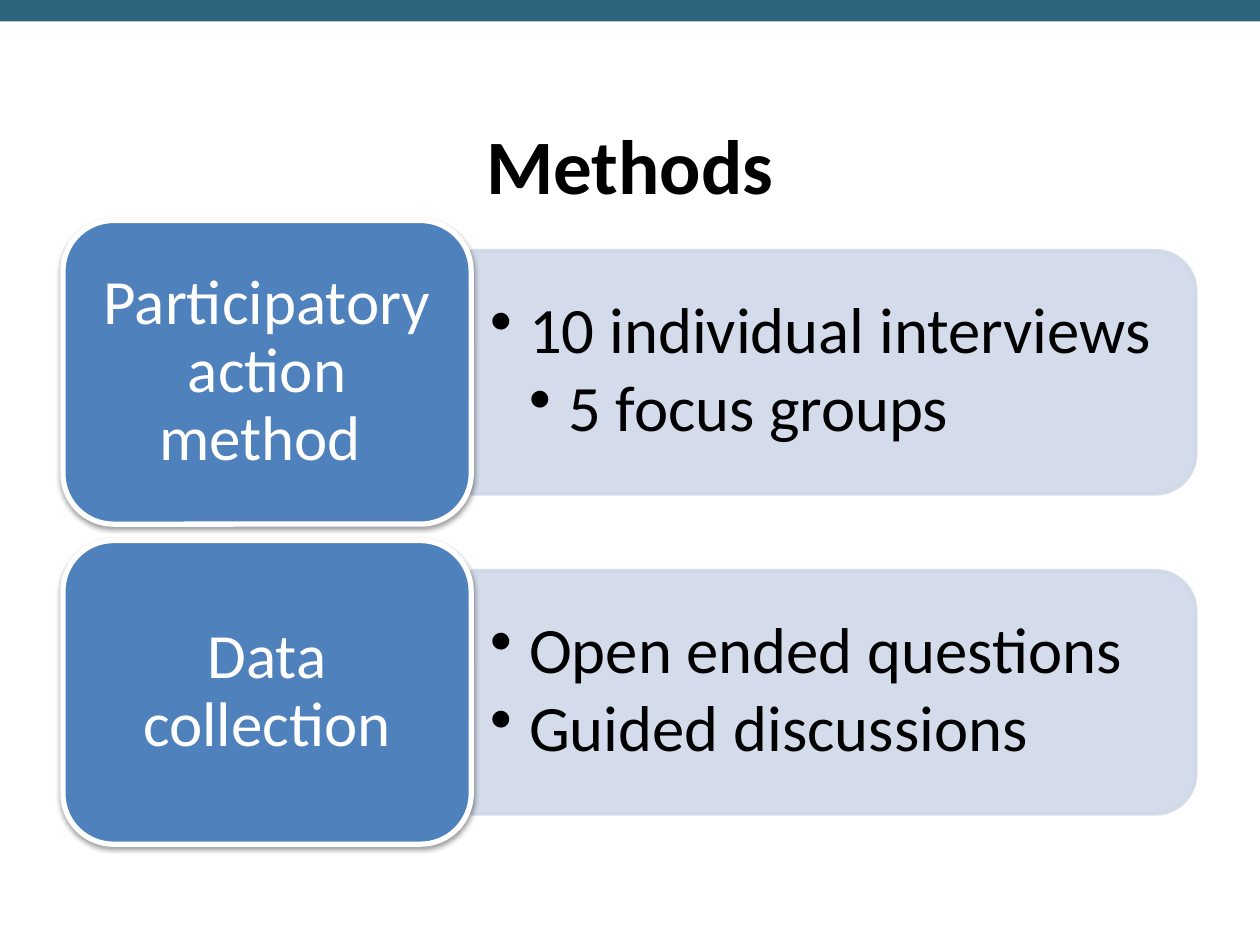
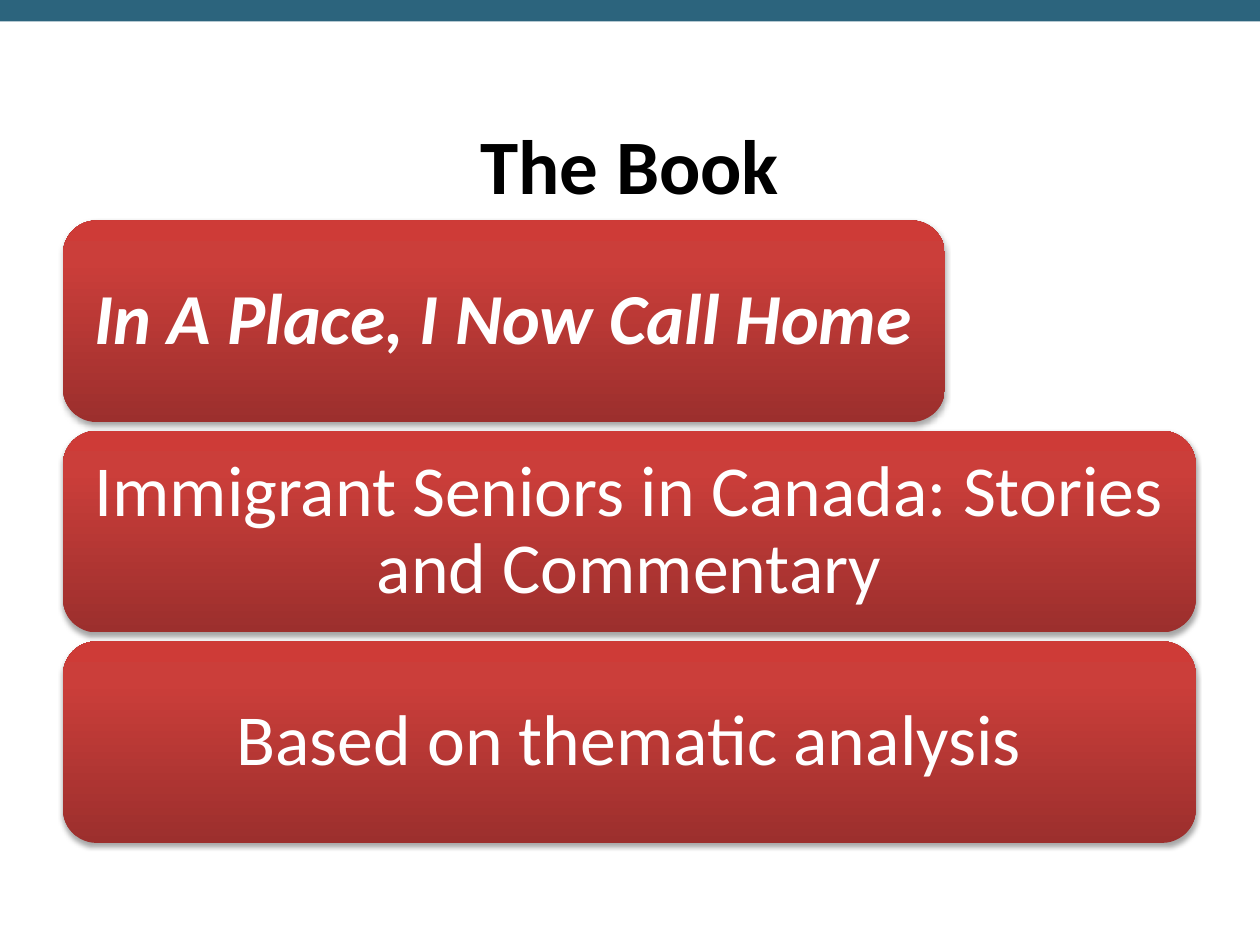
from copy import deepcopy

from lxml import etree
from pptx import Presentation
from pptx import util as u
from pptx.dml.color import RGBColor
from pptx.enum import shapes, text
from pptx.oxml.ns import qn

PX = 9144  # 100 px to the inch
FONT = "Calibri"
BLACK, WHITE = "000000", "FFFFFF"
BAND, CARD, PANEL = "2C647D", "4F81BD", "D0D8E8"
RED_STOPS = ((0, "9C2F2D"), (0.8, "CB3E3A"), (1, "CE3B37"))
SLIDE_WIDTH, SLIDE_HEIGHT = 1000, 750
TITLE_BOX = (50, 67, 900, 125)
BODY_BOX = (50, 175, 899, 495)

METHODS = (
    ("Participatory action method ", (("10 individual interviews", 0), ("5 focus groups", 1))),
    ("Data collection", (("Open ended questions", 0), ("Guided discussions", 0))),
)
BOOK_BARS = (
    ("In A Place, I Now Call Home ", 700, True),
    ("Immigrant Seniors in Canada: Stories and Commentary", 899, False),
    ("Based on thematic analysis", 899, False),
)


def px(*lengths):
    return [u.Emu(length * PX) for length in lengths]


def rgb(color):
    return RGBColor.from_string(color)


def add_shape(slide, kind, box, fill=None, line=None, line_width=0):
    shape = slide.shapes.add_shape(kind, *px(*box))
    shape.shadow.inherit = False
    if fill:
        shape.fill.solid()
        shape.fill.fore_color.rgb = rgb(fill)
    if line:
        shape.line.color.rgb = rgb(line)
        shape.line.width = u.Pt(line_width)
    else:
        shape.line.fill.background()
    return shape


def add_shadow(shape, opacity, distance):
    """Cast a soft shadow straight down; opacity in percent, distance in points."""
    effects = shape._element.spPr.find(qn("a:effectLst"))
    shadow = etree.SubElement(effects, qn("a:outerShdw"), blurRad=str(u.Pt(3.1)),
                              dist=str(u.Pt(distance)), dir="5400000", rotWithShape="0")
    color = etree.SubElement(shadow, qn("a:srgbClr"), val=BLACK)
    etree.SubElement(color, qn("a:alpha"), val=str(opacity * 1000))


def set_opacity(shape, percent):
    for color in shape._element.spPr.iter(qn("a:srgbClr")):
        etree.SubElement(color, qn("a:alpha"), val=str(percent * 1000))


def set_gradient(shape, stops):
    """Fill from bottom to top with three stops."""
    shape.fill.gradient()
    shape.fill.gradient_angle = 90
    stop_list = shape._element.spPr.find(".//" + qn("a:gsLst"))
    stop_list.insert(1, deepcopy(stop_list[0]))
    for stop, (position, color) in zip(shape.fill.gradient_stops, stops):
        stop.position = position
        stop.color.rgb = rgb(color)


def prepare_frame(shape, side, top):
    frame = shape.text_frame
    frame.word_wrap = True
    frame.vertical_anchor = text.MSO_ANCHOR.MIDDLE
    frame.margin_left, frame.margin_right, frame.margin_top, frame.margin_bottom = px(
        side, side, top, top)
    return frame


def style_font(paragraph, size, color, bold=False, italic=False):
    font = paragraph.font
    font.name, font.size, font.color.rgb = FONT, u.Pt(size), rgb(color)
    font.bold, font.italic = bold, italic


def write_centred(shape, words, size, color, side, top, spacing=0.9, **style):
    paragraph = prepare_frame(shape, side, top).paragraphs[0]
    paragraph.text = words
    paragraph.alignment = text.PP_ALIGN.CENTER
    paragraph.line_spacing = spacing
    style_font(paragraph, size, color, **style)


def write_bullets(shape, items):
    frame = prepare_frame(shape, 15, 8)
    indent = 31
    for number, (words, level) in enumerate(items):
        paragraph = frame.paragraphs[0] if number == 0 else frame.add_paragraph()
        paragraph.text = words
        paragraph.level = level
        paragraph.alignment = text.PP_ALIGN.LEFT
        paragraph.line_spacing = 0.9
        paragraph.space_after = u.Pt(4.5)
        properties = paragraph._p.get_or_add_pPr()
        properties.set("marL", str(indent * (level + 1) * PX))
        properties.set("indent", str(-indent * PX))
        etree.SubElement(properties, qn("a:buChar"), char="•")
        style_font(paragraph, 37, BLACK)


def add_base_slide(presentation, title):
    slide = presentation.slides.add_slide(presentation.slide_layouts[6])
    add_shape(slide, shapes.MSO_SHAPE.RECTANGLE, (0, 0, SLIDE_WIDTH, 17), BAND)
    title_box = slide.shapes.add_textbox(*px(*TITLE_BOX))
    write_centred(title_box, title, 44, BLACK, 10, 5, spacing=1, bold=True)
    return slide


def add_method_row(slide, box, heading, items):
    """Card on the left, with a lower panel of bullets joined to its right side."""
    left, top, width, height = box
    card_width, panel_height = 324, 193
    panel_width = width - card_width
    panel_left = left + card_width
    middle = top + height // 2
    # The panel is an upright shape turned a quarter about its centre.
    upright = (panel_left + (panel_width - panel_height) // 2, middle - panel_width // 2,
               panel_height, panel_width)
    panel = add_shape(slide, shapes.MSO_SHAPE.ROUND_2_SAME_RECTANGLE, upright, PANEL, PANEL, 2)
    panel.rotation = 90
    set_opacity(panel, 90)
    bullets = slide.shapes.add_textbox(*px(panel_left, middle - 87, panel_width - 8, 174))
    write_bullets(bullets, items)

    card = add_shape(slide, shapes.MSO_SHAPE.ROUNDED_RECTANGLE,
                     (left, top, card_width, height), CARD, WHITE, 3)
    add_shadow(card, 38, 1.6)
    write_centred(card, heading, 36, WHITE, 15, 7)


def add_methods_slide(presentation):
    slide = add_base_slide(presentation, "Methods")
    left, top, width, height = BODY_BOX
    gap = 13
    row_height = (height - gap) // len(METHODS)
    for number, (heading, items) in enumerate(METHODS):
        row_top = top + number * (row_height + gap)
        add_method_row(slide, (left, row_top, width, row_height), heading, items)


def add_book_bar(slide, box, words, emphasised):
    bar = add_shape(slide, shapes.MSO_SHAPE.ROUNDED_RECTANGLE, box)
    set_gradient(bar, RED_STOPS)
    add_shadow(bar, 35, 1.8)
    write_centred(bar, words, 41, WHITE, 17, 9, bold=emphasised, italic=emphasised)


def add_book_slide(presentation):
    slide = add_base_slide(presentation, "The Book")
    left, top, _, height = BODY_BOX
    bar_height = 160
    pitch = (height - bar_height) // (len(BOOK_BARS) - 1)
    for number, (words, width, emphasised) in enumerate(BOOK_BARS):
        add_book_bar(slide, (left, top + number * pitch, width, bar_height), words, emphasised)


def main():
    presentation = Presentation()
    presentation.slide_width, presentation.slide_height = px(SLIDE_WIDTH, SLIDE_HEIGHT)
    add_methods_slide(presentation)
    add_book_slide(presentation)
    presentation.save("out.pptx")


if __name__ == "__main__":
    main()
